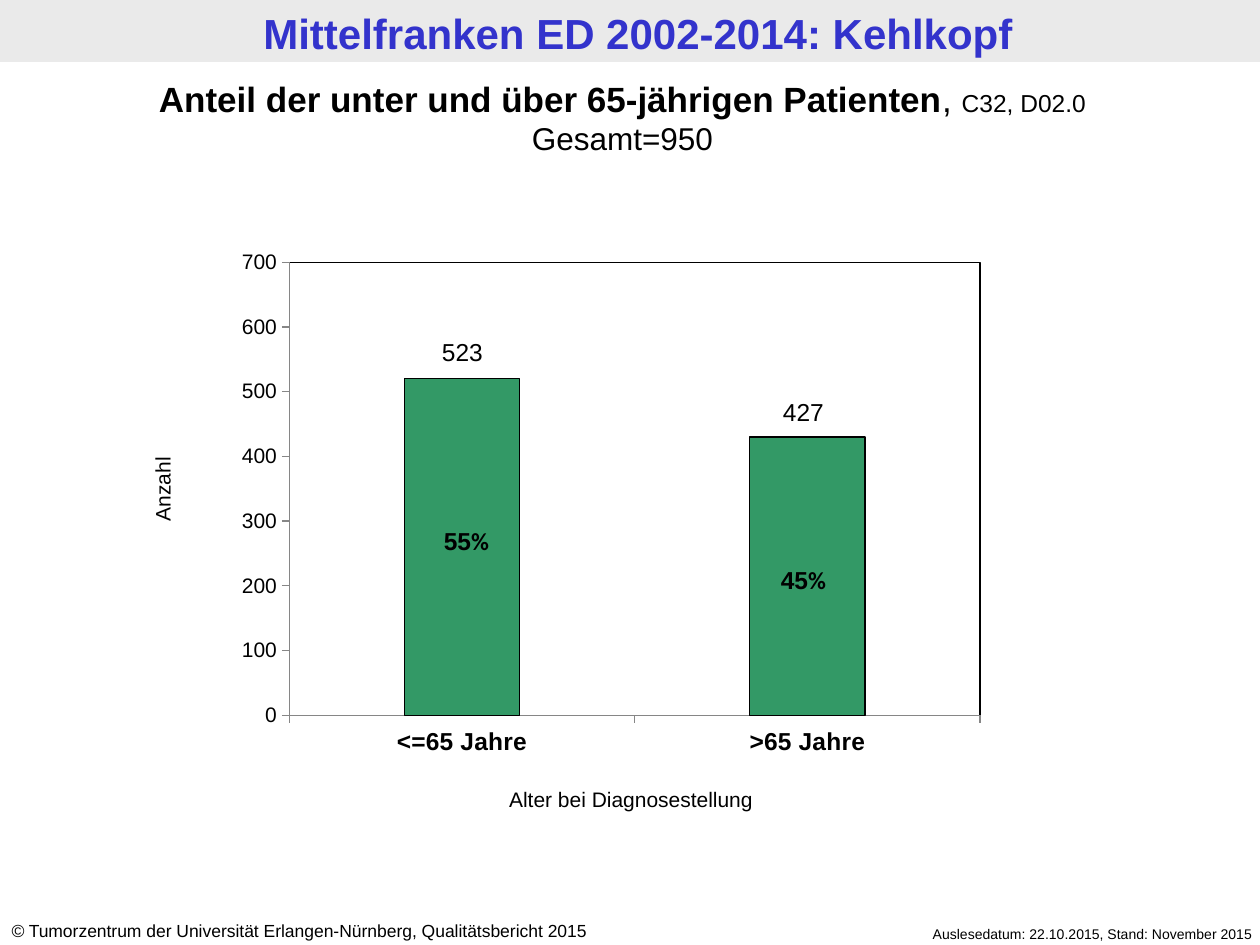
from pptx import Presentation
from pptx.chart.data import CategoryChartData
from pptx.dml.color import RGBColor
from pptx.enum.chart import XL_CHART_TYPE, XL_TICK_MARK
from pptx.enum.shapes import MSO_SHAPE
from pptx.enum.text import PP_ALIGN
from pptx.oxml import parse_xml
from pptx.oxml.ns import nsdecls
from pptx.util import Emu, Pt

STACKED = XL_CHART_TYPE.COLUMN_STACKED
OUTSIDE, NONE = XL_TICK_MARK.OUTSIDE, XL_TICK_MARK.NONE
RECT = MSO_SHAPE.RECTANGLE
LEFT, MID, RIGHT = PP_ALIGN.LEFT, PP_ALIGN.CENTER, PP_ALIGN.RIGHT

SCALE = 914400 / 126
COLORS = {"band": "EAEAEA", "title": "3333CC", "text": "000000",
          "bar": "339966", "axis": "868686"}
GROUPS = ["<=65 Jahre", ">65 Jahre"]
COUNTS = [523, 427]
HEIGHTS = [round(count, -1) for count in COUNTS]
LABEL = (129, 43)


def px(n):
    return Emu(round(n * SCALE))


def rgb(name):
    return RGBColor.from_string(COLORS[name])


def style(font, size, color="text", **extra):
    values = {"name": "Arial", "size": Pt(size), "bold": False, **extra}
    for key, value in values.items():
        setattr(font, key, value)
    font.color.rgb = rgb(color)


def add_band(slide, box):
    band = slide.shapes.add_shape(RECT, *map(px, box))
    band.shadow.inherit = False
    band.fill.solid()
    band.fill.fore_color.rgb = rgb("band")
    band.line.fill.background()


def add_text(slide, box, lines, align=MID, turn=0):
    """Each line is a list of (text, size, format values)."""
    shape = slide.shapes.add_textbox(*map(px, box))
    shape.rotation = turn
    frame = shape.text_frame
    frame.word_wrap = True
    for i, line in enumerate(lines):
        para = frame.add_paragraph() if i else frame.paragraphs[0]
        para.alignment = align
        for text, size, values in line:
            run = para.add_run()
            run.text = text
            style(run.font, size, **values)


def place_plot(chart, x, y, w, h):
    """Fix the inner plot area and draw its frame."""
    area = chart.element.chart.plotArea
    for old in area.xpath("c:layout"):
        area.remove(old)
    parts = "".join(f'<c:{k} val="{v}"/>'
                    for k, v in zip("xywh", (x, y, w, h)))
    area.insert(0, parse_xml(
        f'<c:layout {nsdecls("c")}><c:manualLayout>'
        '<c:layoutTarget val="inner"/><c:xMode val="edge"/>'
        f'<c:yMode val="edge"/>{parts}</c:manualLayout></c:layout>'))
    area.append(parse_xml(
        f'<c:spPr {nsdecls("c", "a")}><a:noFill/><a:ln w="9525"><a:solidFill>'
        f'<a:srgbClr val="{COLORS["text"]}"/></a:solidFill></a:ln></c:spPr>'))


def add_bars(slide, box):
    data = CategoryChartData()
    data.categories = GROUPS
    data.add_series("Anzahl", HEIGHTS)
    chart = slide.shapes.add_chart(STACKED, *map(px, box), data).chart
    chart.has_legend = chart.has_title = False
    style(chart.font, 18, name="Calibri")

    # Bars
    plot = chart.plots[0]
    plot.gap_width, plot.overlap = 200, 100
    plot.vary_by_categories = False
    look = plot.series[0].format
    look.fill.solid()
    look.fill.fore_color.rgb = rgb("bar")
    look.line.color.rgb = rgb("text")
    look.line.width = Pt(0.75)

    # Axes
    for axis, size, bold in ((chart.category_axis, 14, True),
                             (chart.value_axis, 12, False)):
        axis.has_major_gridlines = False
        axis.major_tick_mark, axis.minor_tick_mark = OUTSIDE, NONE
        axis.format.line.color.rgb = rgb("axis")
        axis.format.line.width = Pt(0.75)
        style(axis.tick_labels.font, size, bold=bold)
    scale = chart.value_axis
    scale.minimum_scale, scale.maximum_scale = 0, 700
    scale.major_unit = 100
    place_plot(chart, 0.113, 0.142, 0.786, 0.772)


def main():
    deck = Presentation()
    deck.slide_width, deck.slide_height = px(1260), px(945)
    slide = deck.slides.add_slide(deck.slide_layouts[6])
    bold = {"bold": True}

    # Header and footer
    add_band(slide, (0, 0, 1260, 62))
    add_text(slide, (8, 1, 1260, 62),
             [[("Mittelfranken ED 2002-2014: Kehlkopf", 24,
                {"color": "title", **bold})]])
    add_text(slide, (838, 919, 427, 30),
             [[("Auslesedatum: 22.10.2015, Stand: November 2015", 8, {})]],
             RIGHT)
    add_text(slide, (-1, 914, 660, 34),
             [[("©", 10, {"italic": True}),
               (" Tumorzentrum der Universität Erlangen-Nürnberg, "
                "Qualitätsbericht 2015", 10, {})]], LEFT)

    # Chart and its heading
    add_bars(slide, (190, 179, 879, 587))
    add_text(slide, (0, 71, 1245, 93),
             [[("Anteil der unter und über 65-jährigen Patienten", 20, bold),
               (", ", 20, {}), ("C32, D02.0", 14, {})],
              [("Gesamt=950", 18, {})]])

    # Shares inside the bars, counts above them
    spots = [((402, 520), (398, 331)), ((739, 559), (739, 391))]
    for count, (inner, upper) in zip(COUNTS, spots):
        share = f"{100 * count / sum(COUNTS):.0f}"
        add_text(slide, inner + LABEL,
                 [[(share, 14, bold), ("%", 14, {"name": "Calibri", **bold})]])
        add_text(slide, upper + LABEL, [[(str(count), 14, {})]])

    # Axis titles
    add_text(slide, (421, 780, 420, 38),
             [[("Alter bei Diagnosestellung", 12, {})]])
    add_text(slide, (-2, 470, 329, 38), [[("Anzahl", 12, {})]], turn=270)

    deck.save("out.pptx")


if __name__ == "__main__":
    main()
